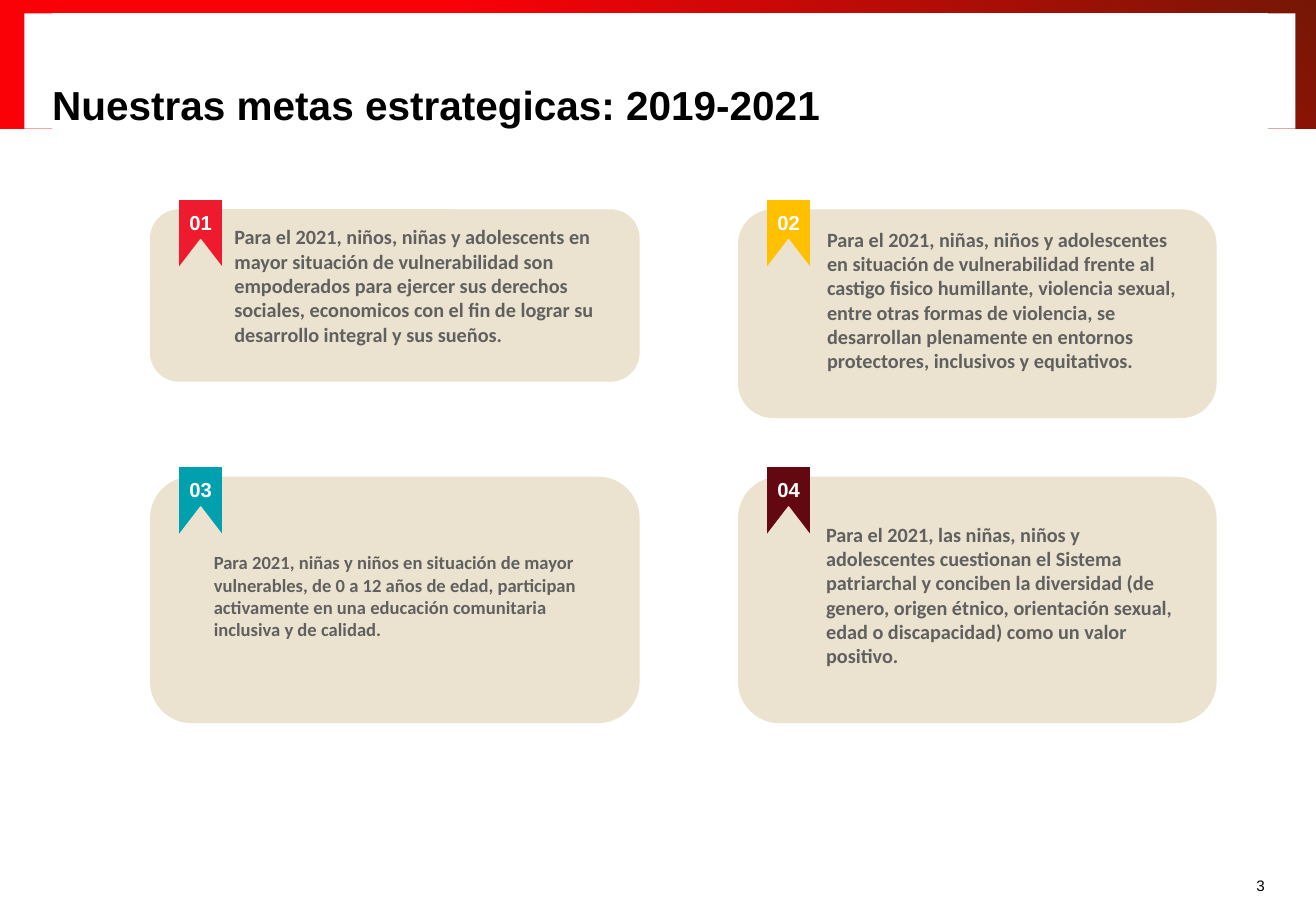
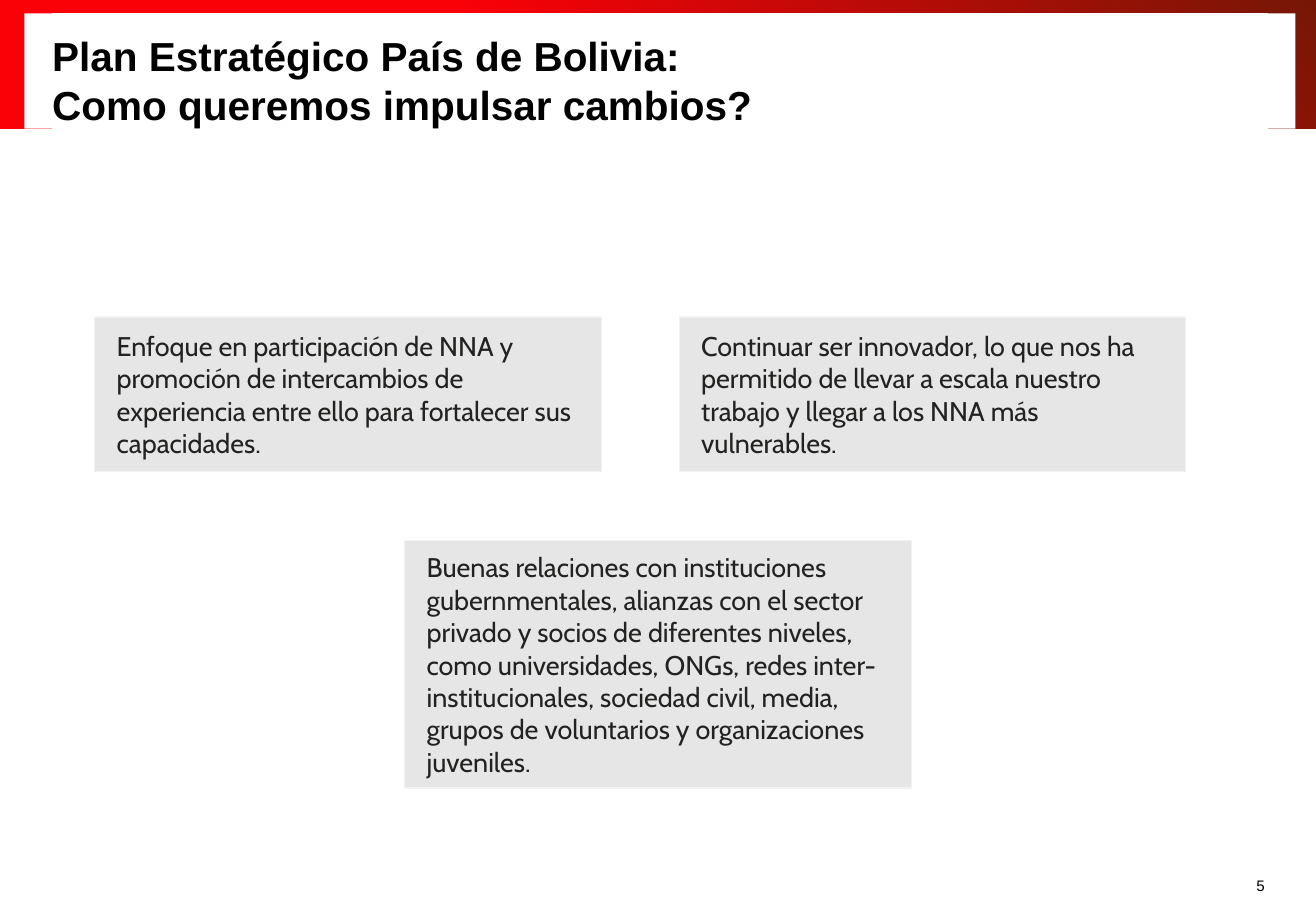
import pptx
import pptx.util
import pptx.dml.color
import pptx.enum.shapes
import pptx.enum.text

Cm = pptx.util.Cm
Pt = pptx.util.Pt
KIND = pptx.enum.shapes.MSO_SHAPE
ALIGN = pptx.enum.text.PP_ALIGN
ANCHOR = pptx.enum.text.MSO_ANCHOR

HUES = {
    "white": "FFFFFF", "black": "000000",
    "bright": "FA0007", "dark": "761706",
    "sand": "EBE3CF", "text": "606060",
    "red": "EE1B2E", "gold": "FFC000", "teal": "00A0AF", "wine": "630810",
    "grey": "E6E6E6", "edge": "F2F2F2", "ink": "222221",
}
PAD = 0.25


def rgb(name):
    return pptx.dml.color.RGBColor.from_string(HUES[name])


class Deck:
    def __init__(self, wide, high):
        self.prs = pptx.Presentation()
        self.prs.slide_width, self.prs.slide_height = Cm(wide), Cm(high)
        self.wide = wide
        self.base = self.prs.slide_layouts[5]
        self.slide = None

    def start(self, title, page):
        first = self.slide is None
        self.slide = self.prs.slides.add_slide(self.base)
        if first:
            self.band()
        self.title(title)
        self.text(page, (25.88, 18.19, 0.81, 0.64), 9, "black",
                  align=ALIGN.RIGHT, pad=(0.25, 0.13))

    def band(self):
        """Draw the header frame and move it to the shared layout."""
        frame = self.shape(KIND.RECTANGLE, (0, 0, self.wide, 2.69), "bright")
        frame.fill.gradient()
        frame.fill.gradient_angle = 45
        stops = frame.fill.gradient_stops
        for stop, place, hue in zip(stops, (0.4, 1), ("bright", "dark")):
            stop.position = place
            stop.color.rgb = rgb(hue)
        inner = self.shape(KIND.RECTANGLE, (0.51, 0.28, 26.57, 2.41), "white")
        tree = self.base.shapes.element
        for spot, part in enumerate((frame, inner), 2):
            tree.insert(spot, part.element)

    def title(self, words):
        head = self.slide.shapes.title
        head.left, head.top, head.width, head.height = map(
            Cm, (1.09, 0.28, 25.4, 2.41))
        self.paint(head, "white", "white")
        self.label(head, words, 24, "black", "Arial", True,
                   anchor=ANCHOR.BOTTOM, pad=(0, 0))

    def paint(self, shape, fill, line=None):
        shape.fill.solid()
        shape.fill.fore_color.rgb = rgb(fill)
        if line:
            shape.line.color.rgb = rgb(line)
            shape.line.width = Pt(0.75)
        else:
            shape.line.fill.background()

    def shape(self, kind, box, fill, line=None):
        shape = self.slide.shapes.add_shape(kind, *map(Cm, box))
        shape.shadow.inherit = False
        self.paint(shape, fill, line)
        return shape

    def label(self, shape, words, size, hue, face="Arial", bold=False,
              align=ALIGN.LEFT, anchor=ANCHOR.TOP, pad=(PAD, PAD)):
        frame = shape.text_frame
        frame.text = words
        frame.word_wrap = True
        frame.auto_size = pptx.enum.text.MSO_AUTO_SIZE.NONE
        frame.vertical_anchor = anchor
        frame.margin_left = frame.margin_right = Cm(pad[0])
        frame.margin_top = frame.margin_bottom = Cm(pad[1])
        for par in frame.paragraphs:
            par.alignment = align
            font = par.font
            font.name, font.size, font.bold = face, Pt(size), bold
            font.color.rgb = rgb(hue)

    def text(self, words, box, *style, **more):
        shape = self.slide.shapes.add_textbox(*map(Cm, box))
        self.label(shape, words, *style, **more)

    def goal(self, mark, hue, box, words, area, size):
        """A rounded card with a numbered ribbon."""
        left, top = box[:2]
        self.shape(KIND.ROUNDED_RECTANGLE, box, "sand", "sand")
        self.shape(KIND.RECTANGLE, (left + 0.6, top - 0.2, 0.89, 1.4),
                   hue, hue)
        self.shape(KIND.ISOSCELES_TRIANGLE,
                   (left + 0.6, top + 0.62, 0.89, 0.58), "sand", "sand")
        self.text(words, area, size, "text", "Calibri", True)
        self.text(mark, (left + 0.51, top - 0.25, 1.07, 1.02), 12, "white",
                  bold=True, align=ALIGN.CENTER)

    def note(self, words, left, top, high):
        """A grey box with its text indented on the left."""
        shape = self.shape(KIND.RECTANGLE, (left, top, 10.59, high),
                           "grey", "edge")
        self.label(shape, words, 16, "ink", "Cabin", anchor=ANCHOR.MIDDLE)
        shape.text_frame.margin_left = Cm(PAD + 0.21)


def main():
    deck = Deck(27.51, 19.05)

    # Strategic goals: colour, card height, words, text area, text size
    deck.start("Nuestras metas estrategicas: 2019-2021", "3")
    goals = [
        ("red", 3.58,
         "Para el 2021, niños, niñas y adolescents en mayor situación de "
         "vulnerabilidad son empoderados para ejercer sus derechos sociales, "
         "economicos con el fin de lograr su desarrollo integral y sus "
         "sueños.", (4.65, 4.45, 8.26, 3.58), 12),
        ("gold", 4.34,
         "Para el 2021, niñas, niños y adolescentes en situación de "
         "vulnerabilidad frente al castigo fisico humillante, violencia "
         "sexual, entre otras formas de violencia, se desarrollan plenamente "
         "en entornos protectores, inclusivos y equitativos.",
         (17.04, 4.5, 8, 4.09), 12),
        ("teal", 5.13,
         "Para 2021, niñas y niños en situación de mayor vulnerables, de 0 a "
         "12 años de edad, participan activamente en una educación "
         "comunitaria inclusiva y de calidad.", (4.22, 11.28, 8.64, 2.39), 11),
        ("wine", 5.13,
         "Para el 2021, las niñas, niños y adolescentes cuestionan el Sistema "
         "patriarchal y conciben la diversidad (de genero, origen étnico, "
         "orientación sexual, edad o discapacidad) como un valor positivo.",
         (17.02, 10.67, 8, 3.58), 12),
    ]
    cols = [(3.15, 10.21), (15.44, 9.98)]
    rows = [4.39, 9.98]
    for i, (hue, high, words, area, size) in enumerate(goals):
        left, wide = cols[i % 2]
        box = (left, rows[i // 2], wide, high)
        deck.goal(f"{i + 1:02}", hue, box, words, area, size)

    # Drivers of change
    deck.start("Plan Estratégico País de Bolivia:\v"
               "Como queremos impulsar cambios?", "5")
    deck.note("Enfoque en participación de NNA y promoción de intercambios de "
              "experiencia entre ello para fortalecer sus capacidades.",
              1.98, 6.63, 3.23)
    deck.note("Continuar ser innovador, lo que nos ha permitido de llevar a "
              "escala nuestro trabajo y llegar a los NNA más vulnerables.",
              14.2, 6.63, 3.23)
    deck.note("Buenas relaciones con instituciones gubernmentales, alianzas "
              "con el sector privado y socios de diferentes niveles, como "
              "universidades, ONGs, redes inter-institucionales, sociedad "
              "civil, media, grupos de voluntarios y organizaciones "
              "juveniles.", 8.46, 11.3, 5.18)

    deck.prs.save("out.pptx")


if __name__ == "__main__":
    main()
